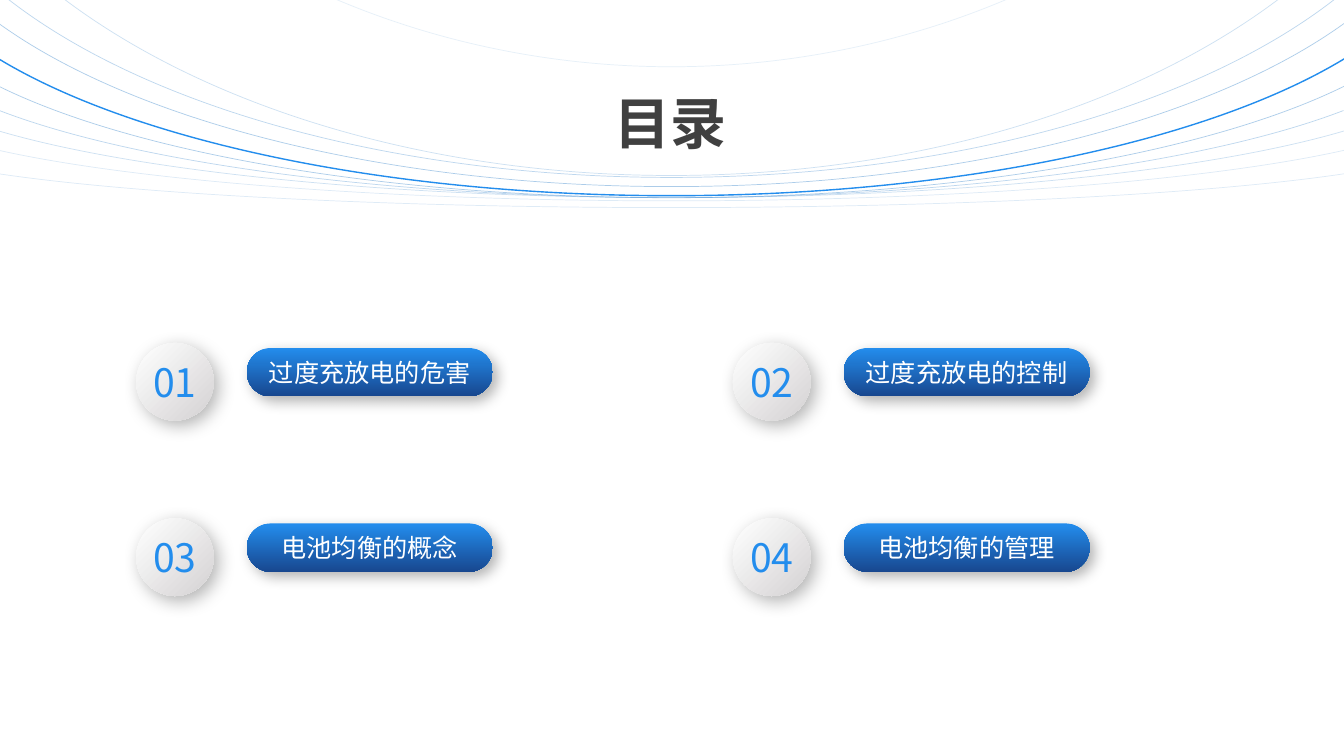
from lxml.etree import SubElement
from pptx import Presentation
from pptx.dml.color import RGBColor
from pptx.enum.shapes import MSO_SHAPE
from pptx.enum.text import MSO_ANCHOR, PP_ALIGN
from pptx.oxml.ns import qn
from pptx.util import Cm, Pt

FONT = "Noto Sans CJK SC"
COLORS = {
    "line": "5B9BD5",
    "blue": "238DED",
    "navy": "18478F",
    "title": "404040",
    "white": "FFFFFF",
    "grey": "D4D2D3",
    "shadow": "000000",
}
# top (cm), height (cm), start of the arc, opacity in percent
ARCS = [
    (-33.3, 34.98, 124.7, 15),
    (-19.46, 23.88, 119.86, 30),
    (-14.5, 18.97, 117.47, 40),
    (-11.96, 16.66, 116.36, 50),
    (-9.04, 13.97, 115.01, 100),
    (-6.4, 11.38, 113.79, 50),
    (-3.94, 8.92, 112.57, 40),
    (-1.83, 6.81, 111.47, 30),
    (-0.1, 5.16, 110.6, 20),
    (1.78, 3.45, 109.5, 20),
]
ARC_ENDS_SUM = 324  # start and end lie evenly about the top of the ellipse
TOPICS = ["过度充放电的危害", "过度充放电的控制", "电池均衡的概念", "电池均衡的管理"]


def rgb(name):
    return RGBColor.from_string(COLORS[name])


def write(shape, text, size, color, bold=False, wrap=False):
    tf = shape.text_frame
    tf.word_wrap = wrap
    p = tf.paragraphs[0]
    p.text = text
    p.alignment = PP_ALIGN.CENTER
    p.font.name = FONT
    p.font.size = Pt(size)
    p.font.bold = bold
    p.font.color.rgb = rgb(color)
    # East Asian typeface
    props = p._p.pPr.find(qn("a:defRPr"))
    SubElement(props, qn("a:ea"), typeface=FONT)
    return tf


def add_raised(slide, kind, box, colors, angle, blur):
    """Borderless shape with a gradient and a soft shadow to the lower right."""
    sp = slide.shapes.add_shape(kind, *(Cm(v) for v in box))
    sp.fill.gradient()
    sp.fill.gradient_angle = 360 - angle
    for stop, color in zip(sp.fill.gradient_stops, colors):
        stop.color.rgb = rgb(color)
    sp.line.fill.background()
    sp.shadow.inherit = False
    effects = sp._element.spPr.find(qn("a:effectLst"))
    shadow = SubElement(effects, qn("a:outerShdw"), blurRad=str(Pt(blur)),
                        dist=str(Pt(5)), dir=str(45 * 60000), algn="tl", rotWithShape="0")
    tint = SubElement(shadow, qn("a:srgbClr"), val=COLORS["shadow"])
    SubElement(tint, qn("a:alpha"), val="30000")
    return sp


def add_curves(slide, left, width):
    for top, height, start, opacity in ARCS:
        sp = slide.shapes.add_shape(MSO_SHAPE.ARC, Cm(left), Cm(top), Cm(width), Cm(height))
        sp.rotation = 180
        sp.adjustments[0] = start
        sp.adjustments[1] = ARC_ENDS_SUM - start
        sp.fill.background()
        sp.shadow.inherit = False
        main = opacity == 100
        sp.line.width = Pt(1 if main else 0.5)
        sp.line.color.rgb = rgb("blue" if main else "line")
        if not main:
            tint = sp.line._ln.find(".//" + qn("a:srgbClr"))
            SubElement(tint, qn("a:alpha"), val=str(opacity * 1000))


def add_title(slide, left, top, width, height):
    sp = slide.shapes.add_textbox(Cm(left), Cm(top), Cm(width), Cm(height))
    write(sp, "目录", 40, "title", bold=True)


def add_topic(slide, left, top, number, topic):
    # Number disc
    disc = add_raised(slide, MSO_SHAPE.OVAL, (left, top, 1.96, 1.96), ("white", "grey"), 45, 13)
    tf = write(disc, f"{number:02d}", 28, "blue")
    tf.vertical_anchor = MSO_ANCHOR.MIDDLE
    # Topic pill
    pill = add_raised(slide, MSO_SHAPE.ROUNDED_RECTANGLE, (left + 2.79, top + 0.13, 6.2, 1.22),
                      ("blue", "navy"), 90, 10)
    pill.adjustments[0] = 0.5
    tf = write(pill, topic, 18, "white", wrap=True)
    tf.vertical_anchor = MSO_ANCHOR.MIDDLE


def add_topics(slide, left, top, column_step, row_step):
    for i, topic in enumerate(TOPICS):
        row, column = divmod(i, 2)
        add_topic(slide, left + column * column_step, top + row * row_step, i + 1, topic)


def main():
    prs = Presentation()
    prs.slide_width, prs.slide_height = Cm(33.87), Cm(19.05)
    slide = prs.slides.add_slide(prs.slide_layouts[6])
    add_curves(slide, -2.74, 39.32)
    add_title(slide, 15.21, 2.11, 3.38, 1.96)
    add_topics(slide, 3.43, 8.64, 15.04, 4.42)
    prs.save("out.pptx")


if __name__ == "__main__":
    main()
